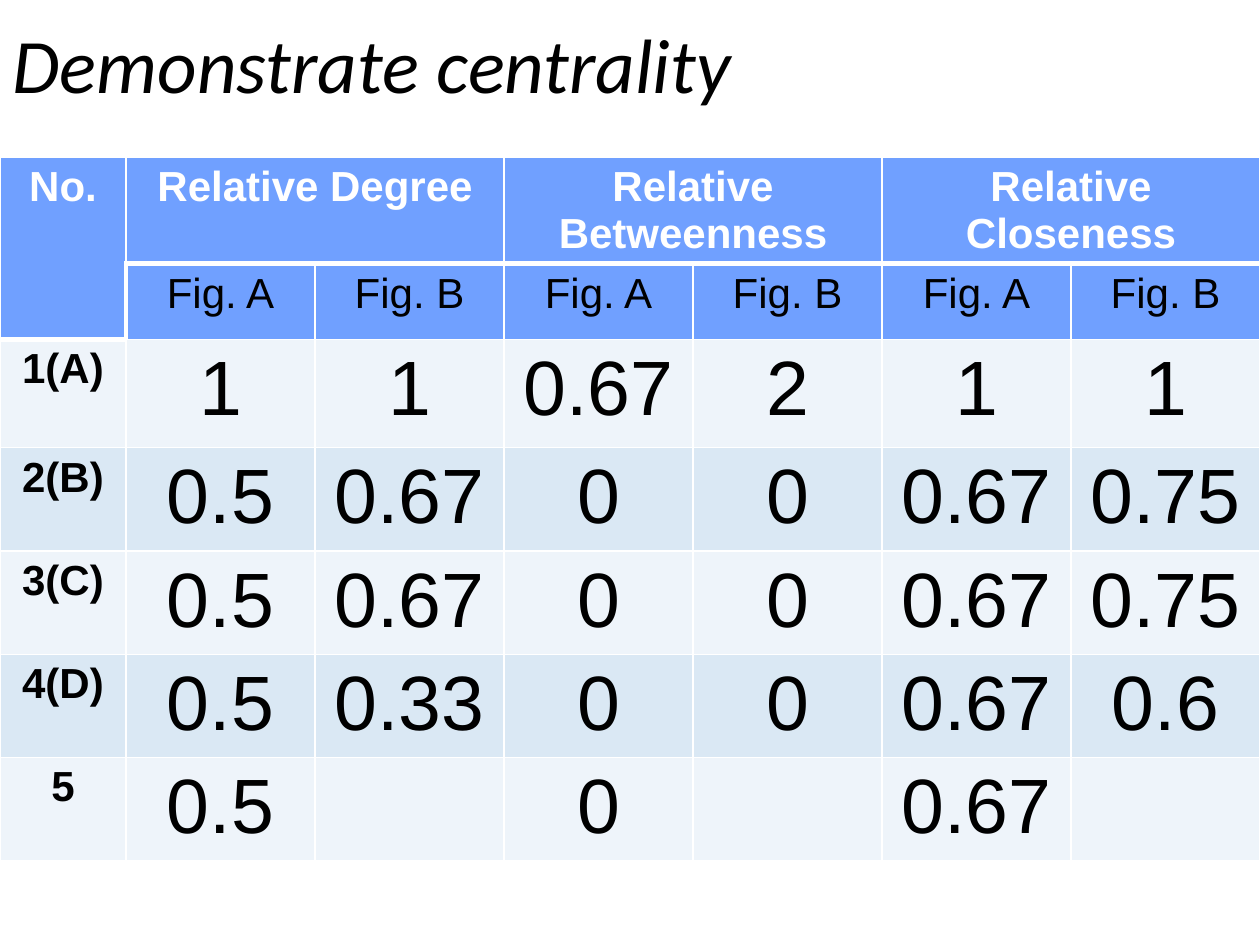
from dataclasses import dataclass

from lxml.etree import SubElement
from pptx import Presentation
from pptx.dml.color import RGBColor as RGB
from pptx.enum.text import MSO_ANCHOR, PP_ALIGN
from pptx.oxml.ns import qn
from pptx.util import Inches, Pt


@dataclass(frozen=True)
class Theme:
    black: RGB = RGB.from_string("000000")
    white: RGB = RGB.from_string("FFFFFF")
    header: RGB = RGB.from_string("70A0FF")
    bands: tuple = (RGB.from_string("EEF4FA"), RGB.from_string("DAE8F4"))
    title_font: str = "Calibri"
    table_font: str = "Arial"
    large: int = 44
    small: int = 24
    thin: int = 1
    thick: int = 3


THEME = Theme()
MEASURES = ["Relative Degree", "Relative Betweenness", "Relative Closeness"]
FIGURES = ["Fig. A", "Fig. B"]
SCORES = [
    ("1(A)", "1", "1", "0.67", "2", "1", "1"),
    ("2(B)", "0.5", "0.67", "0", "0", "0.67", "0.75"),
    ("3(C)", "0.5", "0.67", "0", "0", "0.67", "0.75"),
    ("4(D)", "0.5", "0.33", "0", "0", "0.67", "0.6"),
    ("5", "0.5", "", "0", "", "0.67", ""),
]
COLUMN_WIDTHS = [1] + [1.5] * 6
ROW_HEIGHTS = [0.67, 0.6, 0.86] + [0.82] * 4


def style_paragraph(paragraph, face, size, color, bold=False, italic=False):
    font = paragraph.font
    font.name, font.size = face, Pt(size)
    font.bold, font.italic = bold, italic
    font.color.rgb = color


def add_title(slide, text):
    title = slide.shapes.title
    title.left, title.top = Inches(0), Inches(0)
    title.width, title.height = Inches(10), Inches(1)
    frame = title.text_frame
    frame.text = text
    frame.word_wrap = True
    frame.vertical_anchor = MSO_ANCHOR.MIDDLE
    heading = frame.paragraphs[0]
    heading.alignment = PP_ALIGN.LEFT
    style_paragraph(heading, THEME.title_font, THEME.large, THEME.black, italic=True)


def set_borders(cell, thick_sides):
    properties = cell._tc.get_or_add_tcPr()
    for position, side in enumerate("LRTB"):
        width = THEME.thick if side in thick_sides else THEME.thin
        line = SubElement(properties, qn(f"a:ln{side}"), w=str(Pt(width)))
        fill = SubElement(line, qn("a:solidFill"))
        SubElement(fill, qn("a:srgbClr"), val=str(THEME.white))
        # Border lines must precede the cell fill
        properties.insert(position, line)


def fill_cell(cell, text, fill, size, color, bold, thick_sides=""):
    cell.text = text
    cell.fill.solid()
    cell.fill.fore_color.rgb = fill
    label = cell.text_frame.paragraphs[0]
    label.alignment = PP_ALIGN.CENTER
    style_paragraph(label, THEME.table_font, size, color, bold)
    set_borders(cell, thick_sides)


def add_header(table):
    # Measure names over pairs of figures
    measures = ["No."] + [text for name in MEASURES for text in (name, "")]
    for column, text in enumerate(measures):
        fill_cell(table.cell(0, column), text, THEME.header, THEME.small,
                  THEME.white, True, "B")

    # Figure names
    for column, text in enumerate([""] + FIGURES * len(MEASURES)):
        thick_sides = {0: "RB", 1: "LT"}.get(column, "T")
        fill_cell(table.cell(1, column), text, THEME.header, THEME.small,
                  THEME.black, False, thick_sides)

    table.cell(0, 0).merge(table.cell(1, 0))
    for column in range(1, len(COLUMN_WIDTHS), 2):
        table.cell(0, column).merge(table.cell(0, column + 1))


def add_scores(table):
    for index, scores in enumerate(SCORES):
        for column, text in enumerate(scores):
            is_node = column == 0
            fill_cell(table.cell(index + 2, column), text, THEME.bands[index % 2],
                      THEME.small if is_node else THEME.large, THEME.black, is_node,
                      "T" if is_node and index == 0 else "")


def add_centrality_table(slide):
    table = slide.shapes.add_table(
        len(ROW_HEIGHTS), len(COLUMN_WIDTHS),
        Inches(0), Inches(1.25), Inches(10), Inches(5.69)).table
    table.first_row = table.horz_banding = False
    for column, width in zip(table.columns, COLUMN_WIDTHS):
        column.width = Inches(width)
    for row, height in zip(table.rows, ROW_HEIGHTS):
        row.height = Inches(height)
    add_header(table)
    add_scores(table)


def main():
    deck = Presentation()
    deck.slide_width, deck.slide_height = Inches(10), Inches(7.5)
    slide = deck.slides.add_slide(deck.slide_layouts[5])
    add_title(slide, "Demonstrate centrality")
    add_centrality_table(slide)
    deck.save("out.pptx")


if __name__ == "__main__":
    main()
